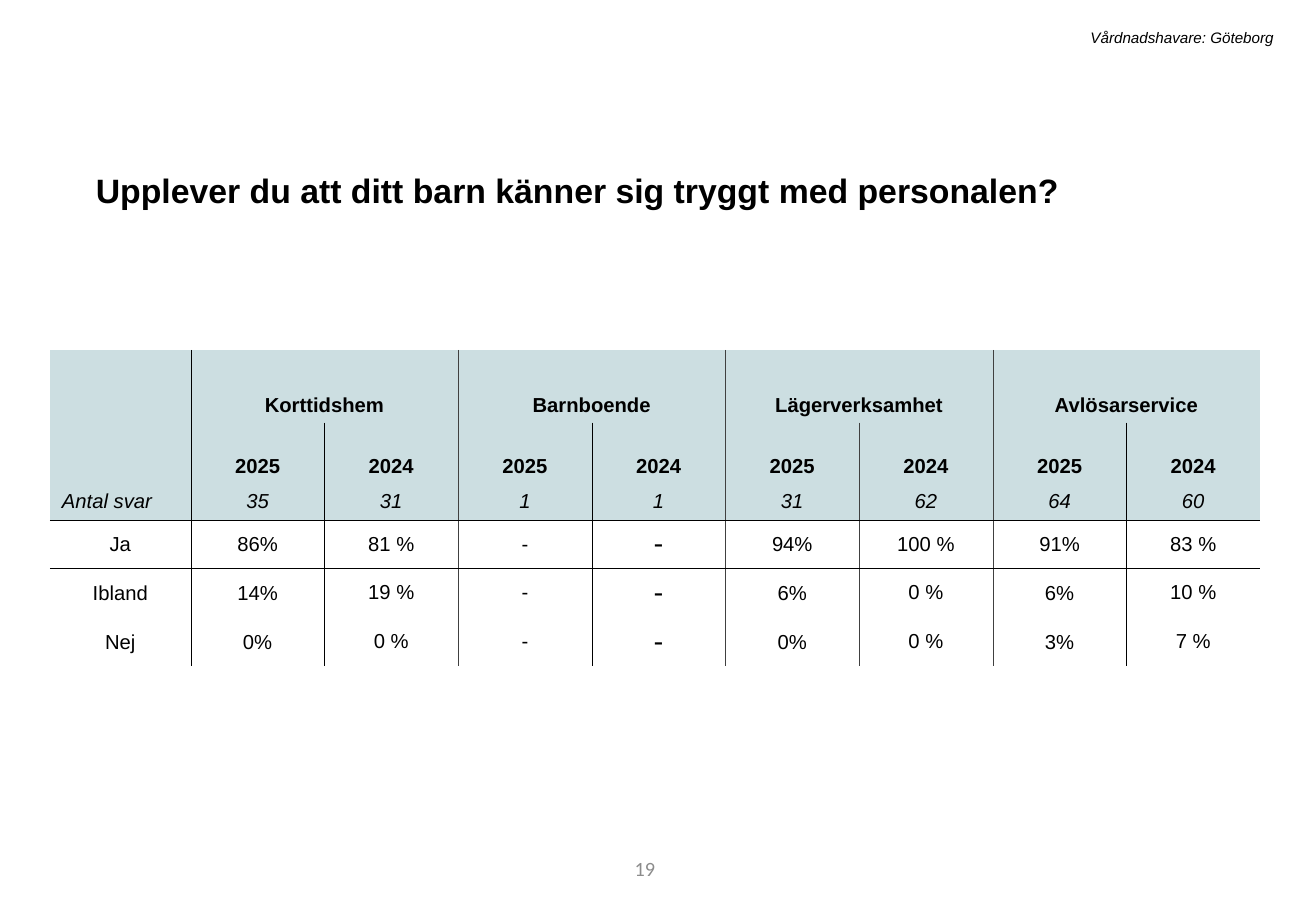
import dataclasses

import pptx
import pptx.dml.color
import pptx.enum.text
import pptx.oxml
import pptx.oxml.ns
import pptx.util

Inches, Pt = pptx.util.Inches, pptx.util.Pt
RGB = pptx.dml.color.RGBColor.from_string
ALIGN = pptx.enum.text.PP_ALIGN
ANCHOR = pptx.enum.text.MSO_ANCHOR


@dataclasses.dataclass(frozen=True)
class Theme:
    font: str = "Arial"
    alt_font: str = "Calibri"
    ink: str = "000000"
    rule: str = "404040"
    muted: str = "8C8C8C"
    header_fill: str = "CCDEE1"
    title_size: float = 20
    dash_size: float = 18
    body_size: float = 12
    tag_size: float = 9


THEME = Theme()
NO_STYLE = "{2D5ABB26-0587-4C30-8999-92F81FD0307C}"

SERVICES = ["Korttidshem", "Barnboende", "Lägerverksamhet", "Avlösarservice"]
ANSWERS = [
    ["", *["2025", "2024"] * len(SERVICES)],
    ["Antal svar", "35", "31", "1", "1", "31", "62", "64", "60"],
    ["Ja", "86%", "81 %", "-", "-", "94%", "100 %", "91%", "83 %"],
    ["Ibland", "14%", "19 %", "-", "-", "6%", "0 %", "6%", "10 %"],
    ["Nej", "0%", "0 %", "-", "-", "0%", "0 %", "3%", "7 %"],
]
COLUMN_WIDTHS = [1.16] + [1.1] * 8
ROW_HEIGHTS = [0.6, 0.5, 0.3] + [0.4] * 3
COUNT_ROW = 2
DASH_COLUMN = 4
TIGHT_COLUMNS = {0, 1, 5, 7}

# Vertical rule to the right of each column: colour and width in points
THIN = (THEME.ink, 0.25)
GROUP = (THEME.rule, 0.25)
RULES = {0: THIN, 1: THIN, 2: (THEME.rule, 0.5), 3: THIN,
         4: GROUP, 6: GROUP, 7: THIN}


def write(frame, text, align, size, color=THEME.ink, font=THEME.font, **style):
    """Put one formatted paragraph in a text frame and return it."""
    paragraph = frame.paragraphs[0]
    paragraph.alignment = align
    run = paragraph.add_run()
    run.text = text
    formats = {"name": font, "size": Pt(size), "bold": False, "italic": False}
    for name, value in {**formats, **style}.items():
        setattr(run.font, name, value)
    run.font.color.rgb = RGB(color)
    return paragraph


def add_label(slide, box, text, align, size, anchor=ANCHOR.TOP, **style):
    frame = slide.shapes.add_textbox(*map(Inches, box)).text_frame
    frame.word_wrap = True
    frame.vertical_anchor = anchor
    return write(frame, text, align, size, **style)


def add_heading(slide, box):
    heading = add_label(slide, box,
                        "Upplever du att ditt barn känner sig tryggt med personalen?",
                        ALIGN.LEFT, THEME.title_size, bold=True)
    heading.line_spacing = 1.2
    heading.space_before = Pt(10)


def draw_borders(cell, row, col):
    def vertical(edge):
        # Merged service names have no rule between their two years
        return None if row == 0 and edge % 2 else RULES.get(edge)

    edges = {
        "lnL": vertical(col - 1),
        "lnR": vertical(col),
        "lnT": THIN if row == COUNT_ROW + 1 else None,
        "lnB": THIN if row == COUNT_ROW else None,
    }
    properties = cell._tc.get_or_add_tcPr()
    for tag, edge in edges.items():
        if edge:
            color, width = edge
            properties.append(pptx.oxml.parse_xml(
                f'<a:{tag} {pptx.oxml.ns.nsdecls("a")} w="{Pt(width)}">'
                f'<a:solidFill><a:srgbClr val="{color}"/></a:solidFill></a:{tag}>'))


def fill_cell(cell, text, row, col):
    draw_borders(cell, row, col)
    if row <= COUNT_ROW:
        cell.fill.solid()
        cell.fill.fore_color.rgb = RGB(THEME.header_fill)
    else:
        cell.fill.background()
        if col in TIGHT_COLUMNS:
            cell.margin_left = cell.margin_right = cell.margin_top = Inches(0.01)
            cell.margin_bottom = 0
    cell.vertical_anchor = ANCHOR.BOTTOM if row < COUNT_ROW else ANCHOR.MIDDLE
    if not text:
        return
    dash = row > COUNT_ROW and col == DASH_COLUMN
    write(cell.text_frame, text,
          ALIGN.LEFT if row == COUNT_ROW and col == 0 else ALIGN.CENTER,
          THEME.dash_size if dash else THEME.body_size,
          font=THEME.alt_font if dash else THEME.font,
          bold=row < COUNT_ROW, italic=row == COUNT_ROW)


def add_answer_table(slide, box):
    frame = slide.shapes.add_table(len(ROW_HEIGHTS), len(COLUMN_WIDTHS),
                                   *map(Inches, box))
    table = frame.table
    table.first_row = table.horz_banding = False
    table._tbl.tblPr.find(pptx.oxml.ns.qn("a:tableStyleId")).text = NO_STYLE
    for column, width in zip(table.columns, COLUMN_WIDTHS):
        column.width = Inches(width)
    for line, height in zip(table.rows, ROW_HEIGHTS):
        line.height = Inches(height)

    # Each service name spans its two years
    service_row = [""]
    for service in SERVICES:
        col = len(service_row)
        table.cell(0, col).merge(table.cell(0, col + 1))
        service_row += [service, ""]

    for row, values in enumerate([service_row, *ANSWERS]):
        for col, text in enumerate(values):
            fill_cell(table.cell(row, col), text, row, col)


def main():
    deck = pptx.Presentation()
    deck.slide_width, deck.slide_height = Inches(10.83), Inches(7.5)
    slide = deck.slides.add_slide(deck.slide_layouts[6])

    # Page number, heading and respondent group
    add_label(slide, (3.05, 6.95, 2.44, 0.4), "19", ALIGN.RIGHT, THEME.body_size,
              anchor=ANCHOR.MIDDLE, color=THEME.muted, font=THEME.alt_font)
    add_heading(slide, (0.69, 1.28, 9.4, 0.47))
    add_label(slide, (1.72, 0.18, 8.86, 0.25), "Vårdnadshavare: Göteborg",
              ALIGN.RIGHT, THEME.tag_size, italic=True)

    # Answers per service and year
    add_answer_table(slide, (0.41, 2.88, sum(COLUMN_WIDTHS), sum(ROW_HEIGHTS)))
    deck.save("out.pptx")


if __name__ == "__main__":
    main()
